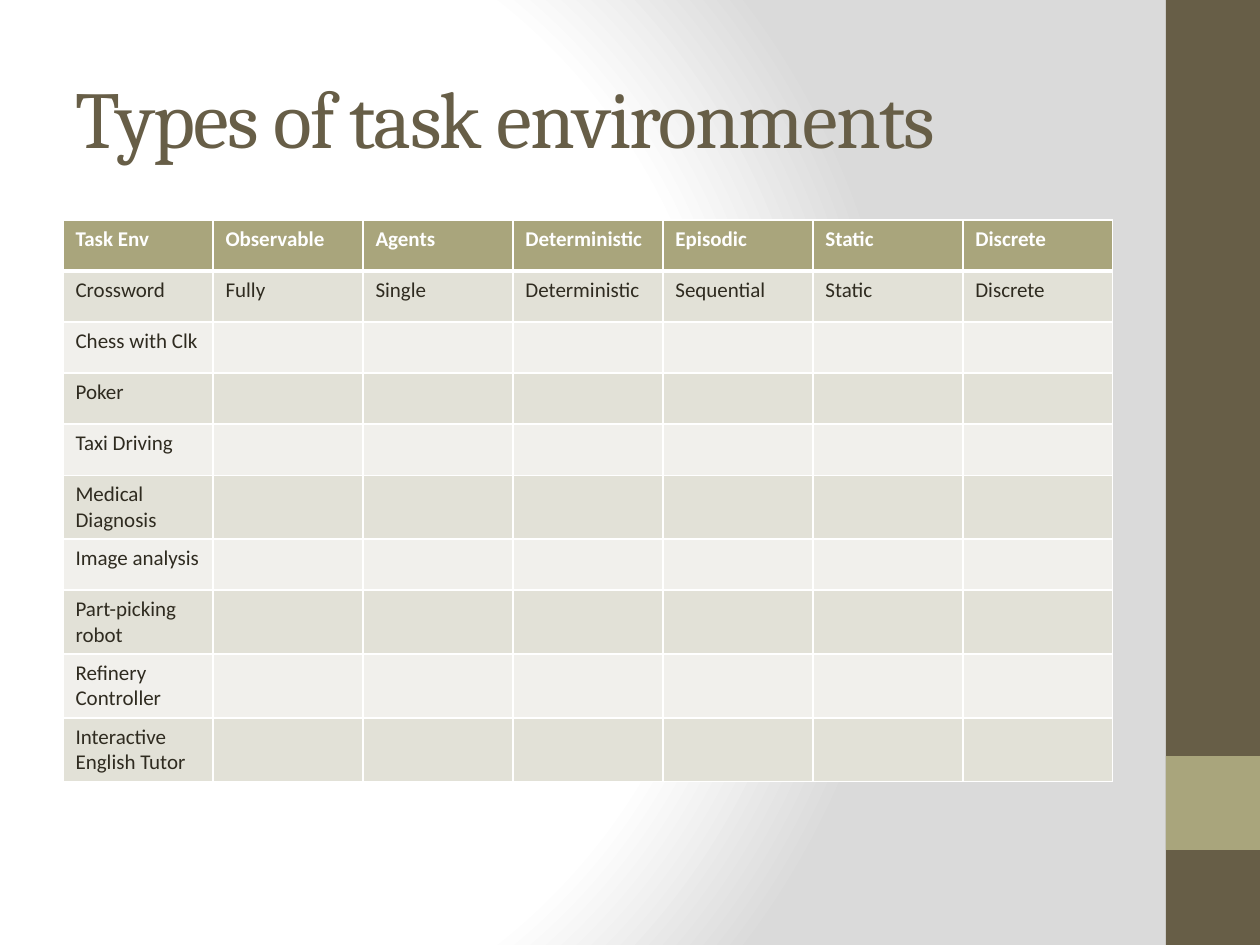
from pptx import Presentation
from pptx.dml.color import RGBColor
from pptx.enum.shapes import MSO_SHAPE as Shape
from pptx.enum.text import MSO_ANCHOR as Anchor, PP_ALIGN as Align
from pptx.oxml import parse_xml
from pptx.oxml.ns import nsdecls, qn
from pptx.util import Emu, Pt

EMU_PER_PX = 914400 // 126
TITLE_ONLY = 5

COLORS = {
    "brown": "675E47",
    "olive": "A9A57C",
    "ink": "2F2B20",
    "band_dark": "E2E1D7",
    "band_light": "F1F0EC",
    "white": "FFFFFF",
    "gray": "DADADA",
}

HEADERS = ["Task Env", "Observable", "Agents", "Deterministic",
           "Episodic", "Static", "Discrete"]
CROSSWORD = ["Crossword", "Fully", "Single", "Deterministic",
             "Sequential", "Static", "Discrete"]
OPEN_TASKS = ["Chess with Clk", "Poker", "Taxi Driving", "Medical Diagnosis",
              "Image analysis", "Part-picking robot", "Refinery Controller",
              "Interactive English Tutor"]


def px(length):
    return Emu(length * EMU_PER_PX)


def rgb(name):
    return RGBColor.from_string(COLORS[name])


class SlideBuilder:
    title_font = "Cambria"
    body_font = "Calibri"

    def __init__(self, slide):
        self.slide = slide

    def background(self):
        stops = "".join(
            f'<a:gs pos="{percent * 1000}"><a:srgbClr val="{COLORS[name]}"/></a:gs>'
            for percent, name in [(0, "white"), (75, "white"), (100, "gray")])
        self.slide.element.find(qn("p:cSld")).insert(0, parse_xml(
            f'<p:bg {nsdecls("p", "a")}><p:bgPr><a:gradFill rotWithShape="1">'
            f'<a:gsLst>{stops}</a:gsLst><a:path path="circle">'
            '<a:fillToRect l="20000" t="50000" r="100000" b="50000"/></a:path>'
            '</a:gradFill><a:effectLst/></p:bgPr></p:bg>'))

    def rectangle(self, left, top, width, height, color):
        shape = self.slide.shapes.add_shape(
            Shape.RECTANGLE, px(left), px(top), px(width), px(height))
        shape.shadow.inherit = False
        shape.fill.solid()
        shape.fill.fore_color.rgb = rgb(color)
        shape.line.fill.background()

    def run(self, paragraph, text, font, size, color, bold=False):
        run = paragraph.add_run()
        run.text = text
        run.font.name = font
        run.font.size = Pt(size)
        run.font.bold = bold
        run.font.color.rgb = rgb(color)
        return run

    def title(self, text, left, top, width, height):
        shape = self.slide.shapes.title
        shape.left, shape.top = px(left), px(top)
        shape.width, shape.height = px(width), px(height)
        frame = shape.text_frame
        frame.word_wrap = True
        frame.vertical_anchor = Anchor.MIDDLE
        paragraph = frame.paragraphs[0]
        paragraph.alignment = Align.LEFT
        run = self.run(paragraph, text, self.title_font, 46, "brown")
        run.font._element.set("spc", "-100")

    def borders(self, cell, top, bottom):
        properties = cell._tc.get_or_add_tcPr()
        for side, points in zip("LRTB", (1, 1, top, bottom)):
            properties.append(parse_xml(
                f'<a:ln{side} {nsdecls("a")} w="{Pt(points)}"><a:solidFill>'
                f'<a:srgbClr val="{COLORS["white"]}"/></a:solidFill></a:ln{side}>'))

    def table(self, rows, left, top, column_width, row_height):
        columns = len(rows[0])
        table = self.slide.shapes.add_table(
            len(rows), columns, px(left), px(top),
            px(column_width * columns), px(row_height * len(rows))).table
        for column in table.columns:
            column.width = px(column_width)
        for index, texts in enumerate(rows):
            table.rows[index].height = px(row_height)
            header = index == 0
            band = "band_dark" if index % 2 else "band_light"
            # Short rows leave their remaining cells empty
            for position, cell in enumerate(table.rows[index].cells):
                self.borders(cell, 3 if index == 1 else 1, 3 if header else 1)
                cell.fill.solid()
                cell.fill.fore_color.rgb = rgb("olive" if header else band)
                if position < len(texts):
                    self.run(cell.text_frame.paragraphs[0], texts[position],
                             self.body_font, 12, "white" if header else "ink", header)


def main():
    presentation = Presentation()
    presentation.slide_width, presentation.slide_height = px(1260), px(945)
    layout = presentation.slide_layouts[TITLE_ONLY]
    builder = SlideBuilder(presentation.slides.add_slide(layout))

    # Background and side bar
    builder.background()
    builder.rectangle(1166, 0, 94, 945, "brown")
    builder.rectangle(1166, 756, 94, 94, "olive")

    # Title and task table
    builder.title("Types of task environments", 63, 38, 1050, 157)
    rows = [HEADERS, CROSSWORD] + [[task] for task in OPEN_TASKS]
    builder.table(rows, 63, 220, 150, 51)

    presentation.save("out.pptx")


if __name__ == "__main__":
    main()
